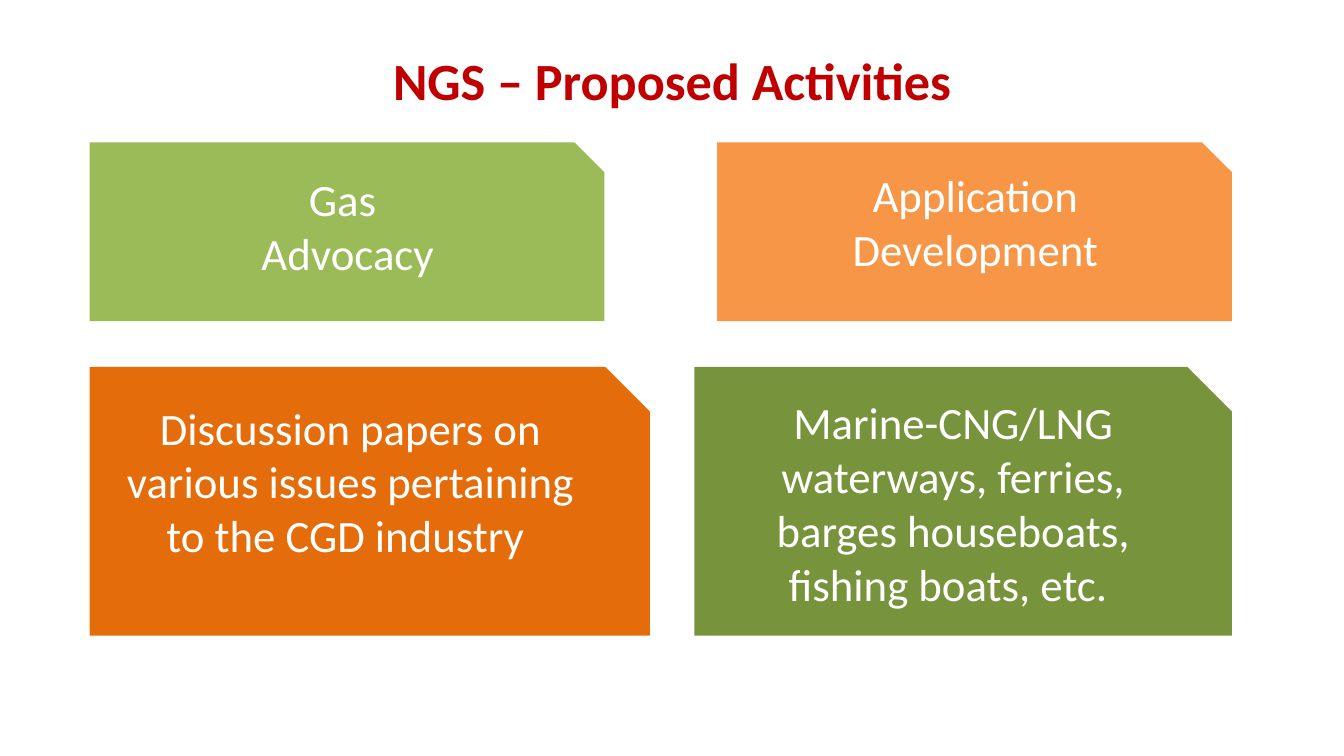
from pptx import Presentation
from pptx.dml.color import RGBColor
from pptx.enum.shapes import MSO_SHAPE as Shape
from pptx.enum.text import MSO_ANCHOR as Anchor, PP_ALIGN as Align
from pptx.util import Inches, Pt

# Widescreen page
WIDTH = 10
HEIGHT = WIDTH * 9 / 16
FONT = "Calibri"

RED = RGBColor(0xC0, 0x00, 0x00)
WHITE = RGBColor(0xFF, 0xFF, 0xFF)
LIGHT_GREEN = RGBColor(0x9B, 0xBB, 0x59)
LIGHT_ORANGE = RGBColor(0xF7, 0x96, 0x46)
DARK_ORANGE = RGBColor(0xE4, 0x6C, 0x0A)
DARK_GREEN = RGBColor(0x77, 0x93, 0x3C)

# Two columns and two rows of cards
LEFT, RIGHT = WIDTH / 15, WIDTH * 11 / 12
HEADING_TOP, HEADING_WIDTH, HEADING_HEIGHT = 1.06, 3.83, 1.33
DETAIL_TOP, DETAIL_HEIGHT = 2.73, 2
DETAIL_LEFT_WIDTH, DETAIL_RIGHT_WIDTH = 4.17, 4


def add_text(page, area, lines, size=24, color=WHITE, bold=False,
             anchor=Anchor.TOP):
    """Place centred text, one paragraph for each line."""
    box = page.shapes.add_textbox(*map(Inches, area))
    frame = box.text_frame
    frame.word_wrap = True
    frame.vertical_anchor = anchor
    for index, line in enumerate(lines):
        para = frame.paragraphs[0] if index == 0 else frame.add_paragraph()
        para.alignment = Align.CENTER
        span = para.add_run()
        span.text = line
        span.font.name = FONT
        span.font.size = Pt(size)
        span.font.bold = bold
        span.font.color.rgb = color


def add_title(page, area):
    add_text(page, area, ["NGS – Proposed Activities"], size=28, color=RED,
             bold=True, anchor=Anchor.MIDDLE)


def add_card(page, area, fill, lines, label):
    """Draw a snipped card; label is the text area as an offset and a size."""
    card = page.shapes.add_shape(Shape.SNIP_1_RECTANGLE, *map(Inches, area))
    card.shadow.inherit = False
    card.fill.solid()
    card.fill.fore_color.rgb = fill
    card.line.fill.background()
    left, top = area[:2]
    shift_x, shift_y, width, height = label
    add_text(page, (left + shift_x, top + shift_y, width, height), lines)


def add_headings(page, left, right, top, width, height):
    add_card(page, (left, top, width, height), LIGHT_GREEN,
             ["Gas ", "Advocacy"], (0.14, 0.17, 3.56, 1.59))
    add_card(page, (right - width, top, width, height), LIGHT_ORANGE,
             ["Application", "Development"], (0.14, 0.14, 3.56, 1.28))


def add_details(page, left, right, top, height):
    add_card(page, (left, top, DETAIL_LEFT_WIDTH, height), DARK_ORANGE,
             ["Discussion papers on various issues pertaining "
              "to the CGD industry "], (0.16, 0.2, 3.56, 1.59))
    add_card(page, (right - DETAIL_RIGHT_WIDTH, top, DETAIL_RIGHT_WIDTH, height),
             DARK_GREEN,
             ["Marine-CNG/LNG waterways, ferries, barges houseboats, "
              "fishing boats, etc. "], (0.16, 0.16, 3.53, 2.51))


def main():
    deck = Presentation()
    deck.slide_width, deck.slide_height = Inches(WIDTH), Inches(HEIGHT)
    page = deck.slides.add_slide(deck.slide_layouts[6])
    add_title(page, (0.5, 0.38, WIDTH - 1, 0.43))
    add_headings(page, LEFT, RIGHT, HEADING_TOP, HEADING_WIDTH, HEADING_HEIGHT)
    add_details(page, LEFT, RIGHT, DETAIL_TOP, DETAIL_HEIGHT)
    deck.save("out.pptx")


if __name__ == "__main__":
    main()
